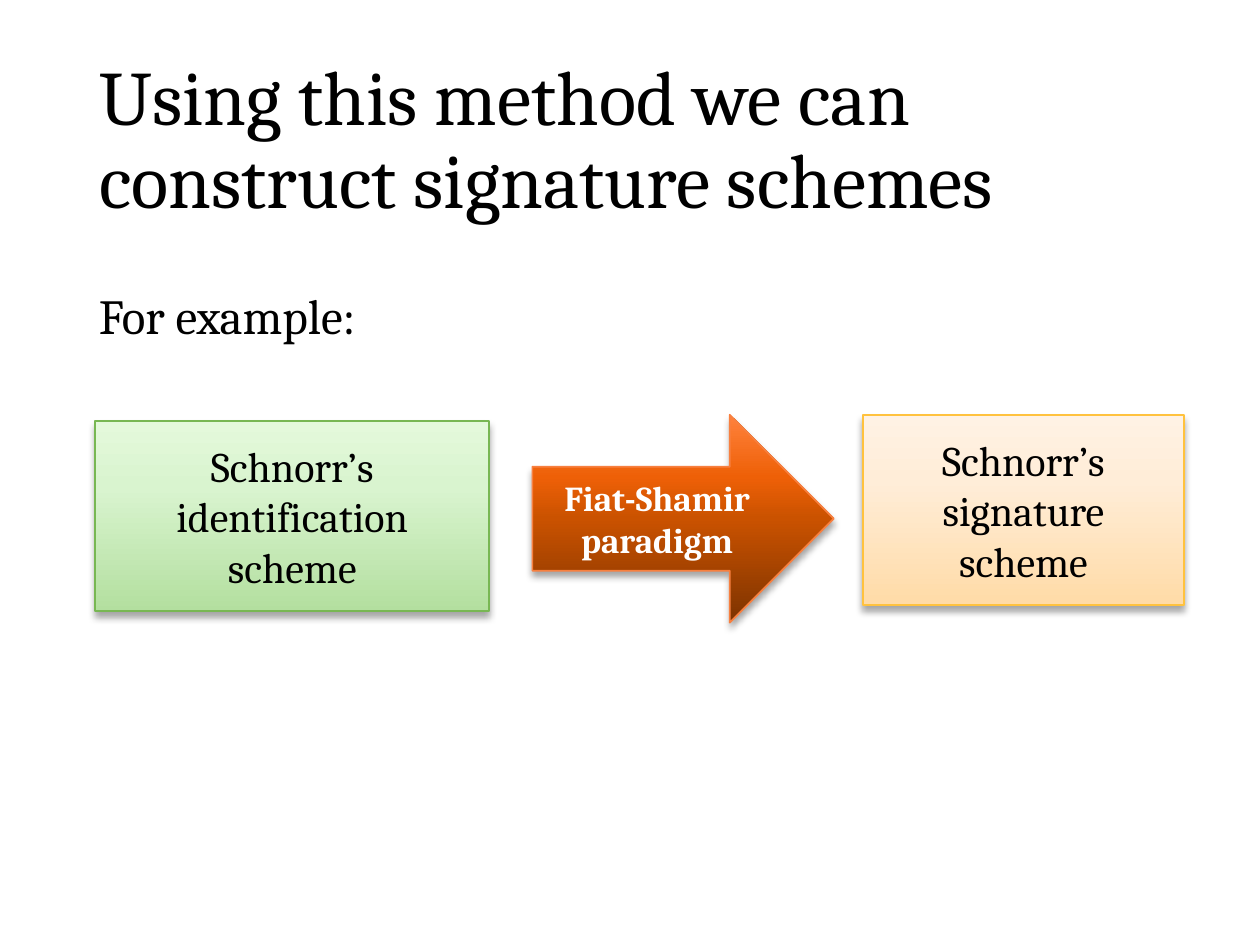
from lxml import etree
from pptx import Presentation
from pptx.dml.color import RGBColor
from pptx.enum import shapes, text
from pptx.oxml.ns import qn
from pptx.util import Pt

THEME = {
    "font": "Cambria",
    "title": {"size": 44, "color": "000000"},
    "body": {"size": 28, "color": "000000"},
    "box": {"size": 24, "color": "000000"},
    "arrow": {"size": 20, "color": "FFFFFF", "bold": True},
    "green": {"line": "78B753", "stops": [(0, "B3DF9F"), (65, "D9F4CF"), (100, "E4F9DB")]},
    "amber": {"line": "FFC23E", "stops": [(0, "FFDBA7"), (65, "FFEDD8"), (100, "FFF2E4")]},
    "orange": {"line": "F88040",
               "stops": [(0, "7D3300"), (50, "CA5200"), (70, "EE6007"), (100, "FF823D")]},
}

TITLE = ("Using this method we can construct signature schemes", (49.5, 29, 621, 104.4))
INTRO = ("For example:", (49.5, 163.5, 621, 65.5))
RECTANGLE = shapes.MSO_SHAPE.RECTANGLE
RIGHT_ARROW = shapes.MSO_SHAPE.RIGHT_ARROW
DIAGRAM = [
    ("Schnorr’s identification scheme", RECTANGLE, (54.5, 240.5, 225, 108.7), "green", "box"),
    ("Schnorr’s signature scheme", RECTANGLE, (493, 237, 183.6, 108.7), "amber", "box"),
    ("Fiat-Shamir paradigm", RIGHT_ARROW, (304.2, 237, 172.2, 118.8), "orange", "arrow"),
]


def write(shape, wording, style, alignment, anchor):
    frame = shape.text_frame
    frame.text = wording
    frame.word_wrap = True
    frame.auto_size = text.MSO_AUTO_SIZE.NONE
    frame.vertical_anchor = anchor
    paragraph = frame.paragraphs[0]
    paragraph.alignment = alignment
    font = paragraph.runs[0].font
    font.name = THEME["font"]
    font.size = Pt(style["size"])
    font.bold = style.get("bold", False)
    font.color.rgb = RGBColor.from_string(style["color"])
    return paragraph


def add_color(parent, color, alpha=None):
    element = etree.SubElement(parent, qn("a:srgbClr"), val=color)
    if alpha is not None:
        etree.SubElement(element, qn("a:alpha"), val=str(alpha * 1000))


def paint(shape, colors):
    """Give the shape a bottom-to-top gradient, a thin outline and a soft shadow."""
    shape.fill.gradient()
    shape.fill.gradient_angle = 90
    stop_list = shape._element.spPr.find(".//" + qn("a:gsLst"))
    for stop in list(stop_list):
        stop_list.remove(stop)
    for position, color in colors["stops"]:
        add_color(etree.SubElement(stop_list, qn("a:gs"), pos=str(position * 1000)), color)
    shape.line.color.rgb = RGBColor.from_string(colors["line"])
    shape.line.width = Pt(1)
    shape.shadow.inherit = False
    effects = shape._element.spPr.find(qn("a:effectLst"))
    shadow = etree.SubElement(effects, qn("a:outerShdw"), blurRad=str(Pt(4)),
                              dist=str(Pt(3)), dir="5400000", rotWithShape="0")
    add_color(shadow, "000000", alpha=35)


def main():
    presentation = Presentation()
    presentation.slide_width, presentation.slide_height = Pt(720), Pt(540)
    slide = presentation.slides.add_slide(presentation.slide_layouts[5])
    left, middle, top = text.PP_ALIGN.LEFT, text.MSO_ANCHOR.MIDDLE, text.MSO_ANCHOR.TOP

    wording, box = TITLE
    title = slide.shapes.title
    title.left, title.top, title.width, title.height = map(Pt, box)
    write(title, wording, THEME["title"], left, middle).line_spacing = 0.9

    wording, box = INTRO
    intro = slide.shapes.add_textbox(*map(Pt, box))
    paragraph = write(intro, wording, THEME["body"], left, top)
    paragraph.line_spacing = 0.9
    paragraph.space_before = Pt(10)

    for wording, kind, box, colors, style in DIAGRAM:
        shape = slide.shapes.add_shape(kind, *map(Pt, box))
        paint(shape, THEME[colors])
        write(shape, wording, THEME[style], text.PP_ALIGN.CENTER, middle)

    presentation.save("out.pptx")


if __name__ == "__main__":
    main()
